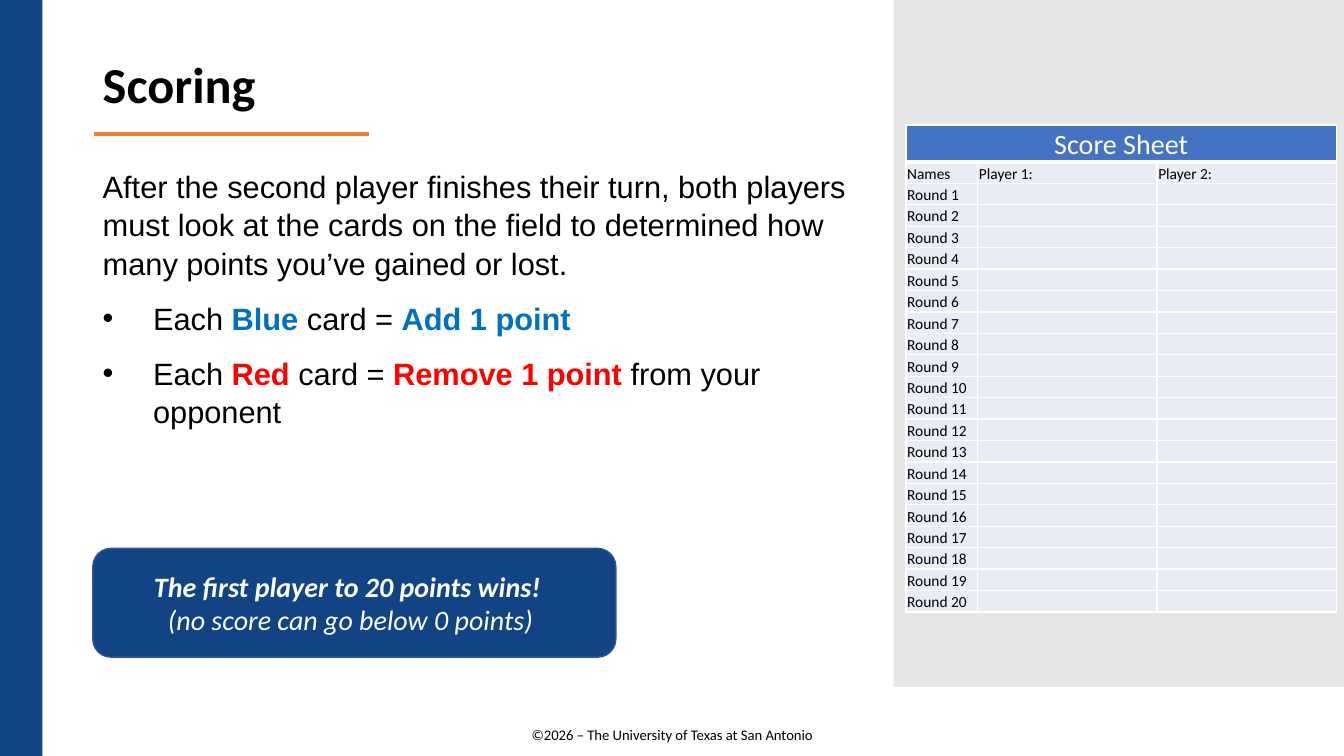
import pptx
import pptx.dml.color
import pptx.enum.shapes
import pptx.enum.text
import pptx.oxml
import pptx.oxml.ns
import pptx.util
from lxml import etree

Cm = pptx.util.Cm
Pt = pptx.util.Pt
NAVY, ORANGE, WHITE, BLACK = "124385", "ED7D31", "FFFFFF", "000000"
BLUE, RED, HEADER, BODY = "0070C0", "FF0000", "4472C4", "E9EBF5"
CENTER = pptx.enum.text.PP_ALIGN.CENTER


def rgb(color):
    """Turn a hex string into a colour."""
    return pptx.dml.color.RGBColor.from_string(color)


def apply(obj, values):
    """Set each named attribute on an object."""
    for name, value in values.items():
        setattr(obj, name, value)


def add_child(parent, tag, **attrs):
    """Append a DrawingML element."""
    return etree.SubElement(parent, pptx.oxml.ns.qn(tag), attrs)


def add_run(p, text, size, color=BLACK, name="Calibri", **font):
    """Write one formatted run."""
    r = p.add_run()
    r.text = text
    apply(r.font, {"size": Pt(size), "name": name, **font})
    r.font.color.rgb = rgb(color)


def add_text(s, left, top, width, height):
    """Add a wrapping text box and return its text frame."""
    tf = s.shapes.add_textbox(Cm(left), Cm(top), Cm(width), Cm(height)).text_frame
    tf.word_wrap = True
    return tf


def add_block(s, kind, left, top, width, height, fill, line=None):
    """Add a filled preset shape."""
    sp = s.shapes.add_shape(kind, Cm(left), Cm(top), Cm(width), Cm(height))
    sp.shadow.inherit = False
    sp.fill.solid()
    sp.fill.fore_color.rgb = rgb(fill)
    if line:
        sp.line.color.rgb = rgb(line)
        sp.line.width = Pt(1)
    else:
        sp.line.fill.background()


def add_rule(s, left, right, y, color, width):
    """Add a horizontal line."""
    sp = s.shapes.add_connector(
        pptx.enum.shapes.MSO_CONNECTOR.STRAIGHT, Cm(left), Cm(y), Cm(right), Cm(y))
    sp.line.color.rgb = rgb(color)
    sp.line.width = Pt(width)
    add_child(sp._element.spPr, "a:effectLst")


def add_bullet(p):
    """Give a paragraph a hanging round bullet."""
    pPr = p._p.get_or_add_pPr()
    pPr.set("marL", str(Cm(1.27)))
    pPr.set("indent", str(-Cm(1.27)))
    add_child(add_child(pPr, "a:buClr"), "a:srgbClr", val=BLACK)
    add_child(pPr, "a:buFont", typeface="Arial")
    add_child(pPr, "a:buChar", char="•")


def add_rules(s):
    """Add the scoring explanation and its bullets."""
    tf = add_text(s, 2.34, 4.06, 19.96, 8.66)
    paragraphs = [
        [("After the second player finishes their turn, both players must look at the "
          "cards on the field to determined how many points you’ve gained or lost.", None)],
        [("Each ", None), ("Blue", BLUE), (" card = ", None), ("Add 1 point", BLUE)],
        [("Each ", None), ("Red", RED), (" card = ", None), ("Remove 1 point ", RED),
         ("from your opponent", None)],
    ]
    for i, runs in enumerate(paragraphs):
        p = tf.add_paragraph() if i else tf.paragraphs[0]
        apply(p, {"line_spacing": 1.04, "space_after": Pt(12)})
        if i:
            add_bullet(p)
        for text, color in runs:
            add_run(p, text, 22, color or BLACK, "Arial", bold=bool(color))


def format_cell(cell, fill, bottom=1):
    """Set margins, white borders and fill of a cell."""
    apply(cell, {"margin_left": Cm(0.03), "margin_right": Cm(0.03),
                 "margin_top": Cm(0.03), "margin_bottom": 0,
                 "vertical_anchor": pptx.enum.text.MSO_ANCHOR.BOTTOM})
    tcPr = cell._tc.get_or_add_tcPr()
    for side, width in zip("LRTB", (1, 1, 1, bottom)):
        ln = add_child(tcPr, f"a:ln{side}", w=str(Pt(width)))
        add_child(add_child(ln, "a:solidFill"), "a:srgbClr", val=WHITE)
    cell.fill.solid()
    cell.fill.fore_color.rgb = rgb(fill)


def add_score_sheet(s):
    """Add the score table with one row per round."""
    rows = [["Score Sheet", "", ""], ["Names", "Player 1:", "Player 2:"]]
    rows += [[f"Round {n}", "", ""] for n in range(1, 21)]
    widths = [1.81, 4.52, 4.52]
    table = s.shapes.add_table(
        len(rows), len(widths), Cm(22.83), Cm(3.15), Cm(sum(widths)), Cm(12.27)).table
    apply(table, {"first_row": False, "horz_banding": False})
    for column, width in zip(table.columns, widths):
        column.width = Cm(width)
    for i, texts in enumerate(rows):
        table.rows[i].height = Cm(0.54 if i else 0.93)
        for cell, text in zip(table.rows[i].cells, texts):
            format_cell(cell, BODY if i else HEADER, 1 if i else 3)
            p = cell.text_frame.paragraphs[0]
            if text:
                add_run(p, text, 11 if i else 20, BLACK if i else WHITE)
            else:
                add_child(p._p, "a:endParaRPr", sz="1100")
    table.cell(0, 0).merge(table.cell(0, 2))
    table.cell(0, 0).text_frame.paragraphs[0].alignment = CENTER


def add_banner(s):
    """Add the winning condition on its rounded panel."""
    add_block(s, pptx.enum.shapes.MSO_SHAPE.ROUNDED_RECTANGLE,
              2.34, 13.82, 13.18, 2.74, NAVY, "325491")
    p = add_text(s, 3.3, 14.22, 11.07, 1.96).paragraphs[0]
    p.alignment = CENTER
    add_run(p, "The first player to 20 points wins! ", 20, WHITE, bold=True, italic=True)
    p.add_line_break()
    add_run(p, "(no score can go below 0 points)", 20, WHITE, italic=True)


def main():
    """Build the scoring slide."""
    prs = pptx.Presentation()
    apply(prs, {"slide_width": Cm(33.87), "slide_height": Cm(19.05)})
    s = prs.slides.add_slide(prs.slide_layouts[6])
    p = add_text(s, 12.17, 18.16, 9.55, 0.71).paragraphs[0]
    p.alignment = CENTER
    add_run(p, "©2026 – The University of Texas at San Antonio", 10.5)
    rectangle = pptx.enum.shapes.MSO_SHAPE.RECTANGLE
    add_block(s, rectangle, 22.52, 0, 11.35, 17.31, "E7E6E6")
    add_block(s, rectangle, 0, 0, 1.07, 19.05, NAVY)
    add_rule(s, 2.36, 9.3, 3.38, ORANGE, 3)
    title = add_text(s, 2.34, 1.22, 17.58, 1.8).paragraphs[0]
    add_run(title, "Scoring", 36, bold=True)
    add_rules(s)
    add_banner(s)
    add_score_sheet(s)
    prs.save("out.pptx")


if __name__ == "__main__":
    main()
